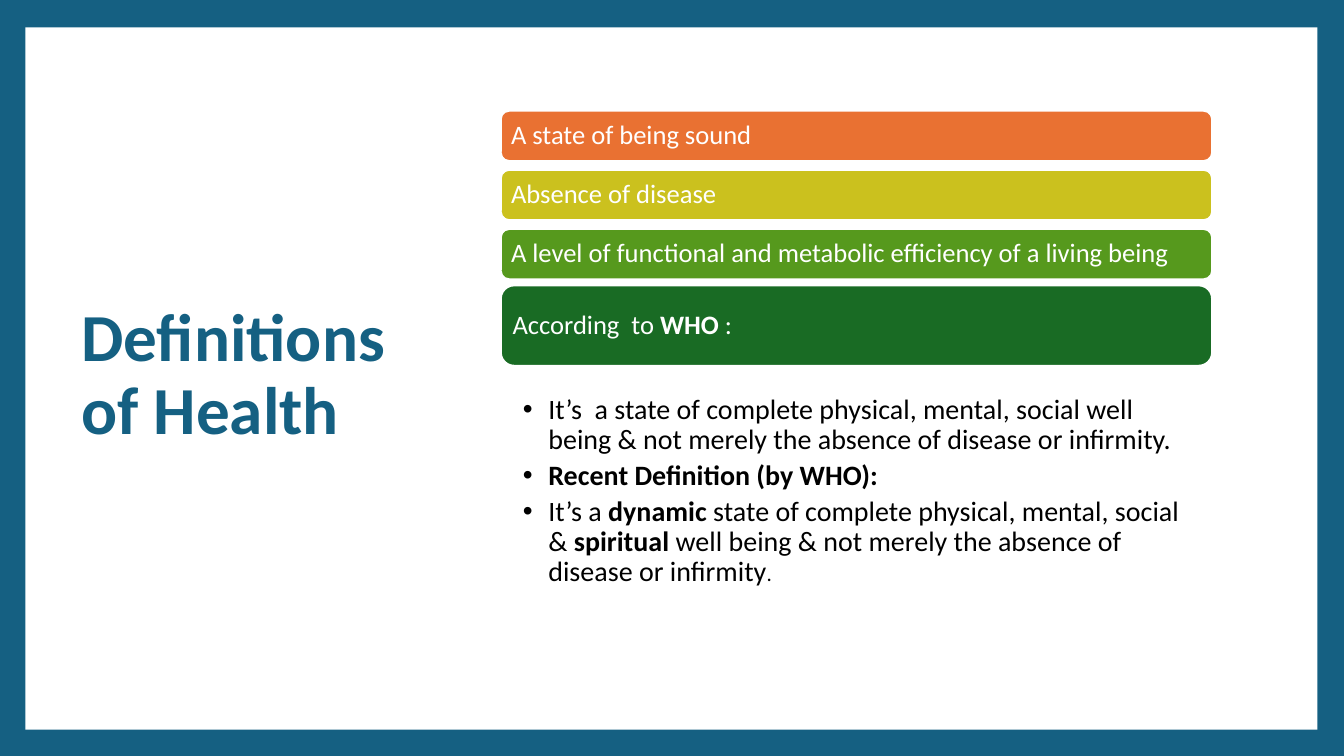
from dataclasses import dataclass

from lxml.etree import SubElement
from pptx import Presentation
from pptx.dml.color import RGBColor
from pptx.enum.shapes import MSO_SHAPE
from pptx.enum.text import MSO_ANCHOR, PP_ALIGN
from pptx.oxml.ns import qn
from pptx.util import Cm, Pt


@dataclass(frozen=True)
class Theme:
    font: str = "Calibri"
    blue: str = "156082"
    white: str = "FFFFFF"
    black: str = "000000"
    orange: str = "E97132"
    yellow: str = "CBC11E"
    light_green: str = "56991D"
    dark_green: str = "196B24"
    title_size: float = 48
    bar_size: float = 19
    body_size: float = 20
    full_stop_size: float = 15
    line_spacing: float = 0.9


def write_text(paragraph, text, *, font, size, color, bold=False):
    run = paragraph.add_run()
    run.text = text
    run.font.name = font
    run.font.size = Pt(size)
    run.font.bold = bold
    run.font.color.rgb = RGBColor.from_string(color)


class SlideBuilder:
    def __init__(self, slide, theme):
        self.slide = slide
        self.theme = theme

    def background(self, color):
        fill = self.slide.background.fill
        fill.solid()
        fill.fore_color.rgb = RGBColor.from_string(color)

    def box(self, kind, left, top, width, height, color):
        shape = self.slide.shapes.add_shape(
            kind, Cm(left), Cm(top), Cm(width), Cm(height)
        )
        shape.shadow.inherit = False
        shape.fill.solid()
        shape.fill.fore_color.rgb = RGBColor.from_string(color)
        shape.line.fill.background()
        return shape

    def frame(self, shape, insets, anchor):
        frame = shape.text_frame
        frame.word_wrap = True
        frame.vertical_anchor = anchor
        frame.margin_left, frame.margin_top, frame.margin_right, frame.margin_bottom = (
            Cm(inset) for inset in insets
        )
        return frame

    def fill_paragraph(self, paragraph, runs, size, color):
        paragraph.alignment = PP_ALIGN.LEFT
        paragraph.line_spacing = self.theme.line_spacing
        for text, changes in runs:
            style = {"font": self.theme.font, "size": size, "color": color}
            write_text(paragraph, text, **(style | changes))

    def title(self, text, left, top, width, height):
        shape = self.slide.shapes.add_textbox(Cm(left), Cm(top), Cm(width), Cm(height))
        frame = self.frame(shape, (0.25, 0.13, 0.25, 0.13), MSO_ANCHOR.MIDDLE)
        self.fill_paragraph(
            frame.paragraphs[0],
            [(text, {"bold": True})],
            self.theme.title_size,
            self.theme.blue,
        )

    def bar(self, runs, left, top, width, height, color):
        shape = self.box(
            MSO_SHAPE.ROUNDED_RECTANGLE, left, top, width, height, color
        )
        shape.line.color.rgb = RGBColor.from_string(self.theme.white)
        shape.line.width = Pt(1.5)
        frame = self.frame(shape, (0.2, 0.2, 0.2, 0.2), MSO_ANCHOR.MIDDLE)
        self.fill_paragraph(
            frame.paragraphs[0], runs, self.theme.bar_size, self.theme.white
        )

    def bullets(self, items, left, top, width, height):
        shape = self.slide.shapes.add_textbox(Cm(left), Cm(top), Cm(width), Cm(height))
        frame = self.frame(shape, (0.56, 0.08, 0.41, 0.08), MSO_ANCHOR.TOP)
        for index, runs in enumerate(items):
            paragraph = frame.add_paragraph() if index else frame.paragraphs[0]
            properties = paragraph._p.get_or_add_pPr()
            properties.set("marL", str(Cm(0.64)))
            properties.set("indent", str(-Cm(0.64)))
            SubElement(properties, qn("a:buFont"), typeface="Arial")
            SubElement(properties, qn("a:buChar"), char="•")
            paragraph.space_after = Pt(self.theme.body_size * 0.2)
            self.fill_paragraph(
                paragraph, runs, self.theme.body_size, self.theme.black
            )


def main():
    theme = Theme()
    presentation = Presentation()
    presentation.slide_width = Cm(33.87)
    presentation.slide_height = Cm(19.05)
    slide = presentation.slides.add_slide(presentation.slide_layouts[6])
    builder = SlideBuilder(slide, theme)
    bold = {"bold": True}

    builder.background(theme.blue)
    builder.box(MSO_SHAPE.RECTANGLE, 0.64, 0.69, 32.56, 17.7, theme.white)
    builder.title("Definitions of Health", 1.8, 1.7, 9.35, 15.57)

    column_left, column_width = 12.62, 17.93
    definitions = [
        ("A state of being sound", theme.orange),
        ("Absence of disease", theme.yellow),
        ("A level of functional and metabolic efficiency of a living being",
         theme.light_green),
    ]
    for index, (text, color) in enumerate(definitions):
        top = 2.79 + index * 1.49
        builder.bar([(text, {})], column_left, top, column_width, 1.27, color)

    builder.bar(
        [("According  to ", {}), ("WHO", bold), (" :", {})],
        column_left, 7.19, column_width, 2.03, theme.dark_green,
    )
    builder.bullets(
        [
            [("It’s  a state of complete physical, mental, social well being "
              "& not merely the absence of disease or infirmity.", {})],
            [("Recent Definition (by WHO):", bold)],
            [
                ("It’s a", {}),
                (" dynamic ", bold),
                ("state of complete physical, mental, social & ", {}),
                ("spiritual", bold),
                (" well being & not merely the absence of disease or infirmity", {}),
                (".", {"size": theme.full_stop_size}),
            ],
        ],
        column_left, 9.88, column_width, 8.43,
    )
    presentation.save("out.pptx")


if __name__ == "__main__":
    main()
